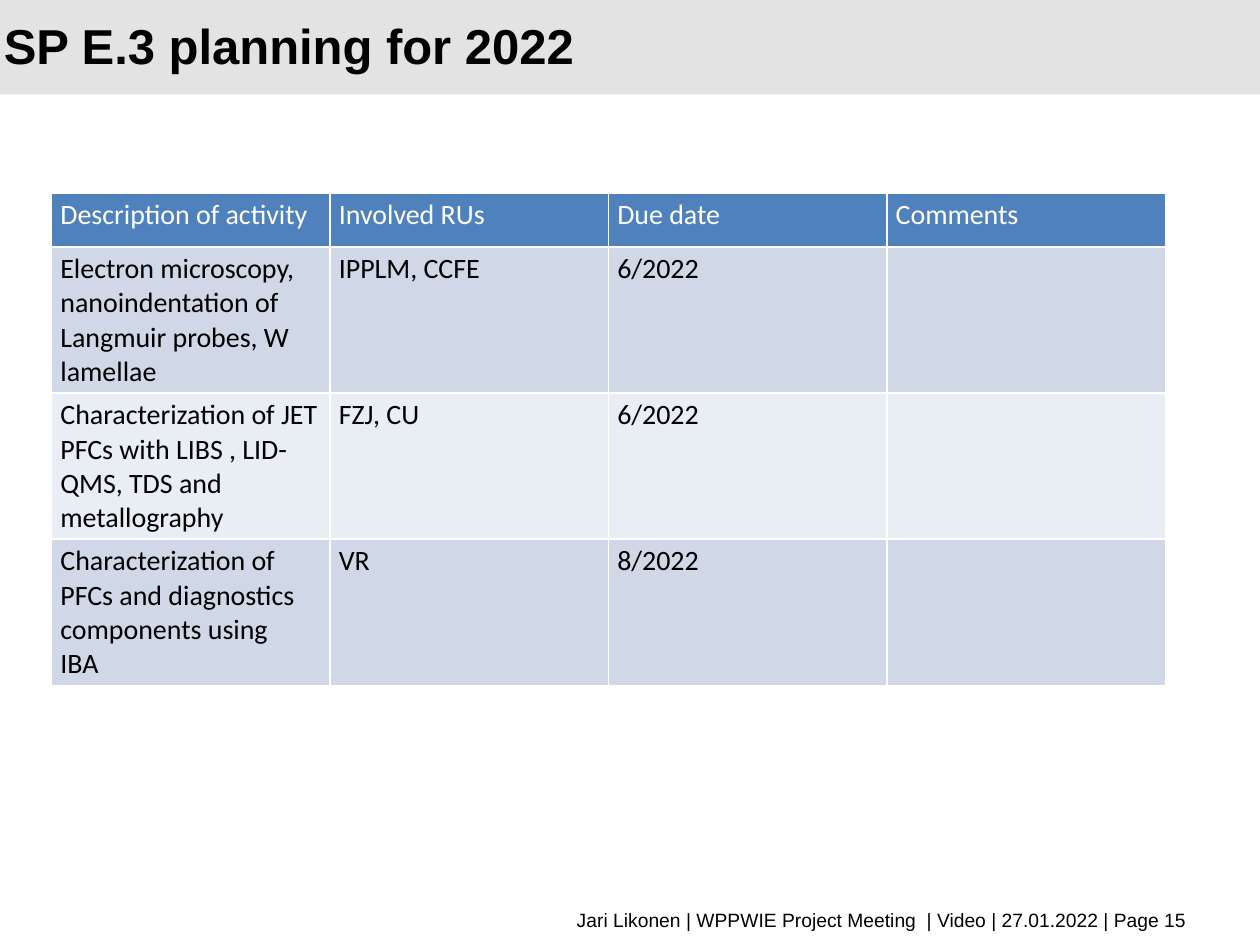
"""Build the SP E.3 planning slide with its activity table."""
from dataclasses import dataclass

from lxml import etree
from pptx import Presentation
from pptx.dml.color import RGBColor
from pptx.enum import shapes, text
from pptx.oxml import ns
from pptx.util import Inches, Pt


@dataclass
class Task:
    about: list[str]
    units: str
    due: str
    note: str = ""


@dataclass
class Style:
    size: float
    face: str
    color: str = "000000"
    bold: bool = False


HEAD = Task(["Description of activity"], "Involved RUs", "Due date", "Comments")
TASKS = [
    Task(["Electron microscopy, nanoindentation of Langmuir probes, W lamellae"],
         "IPPLM, CCFE", "6/2022"),
    Task(["Characterization of JET PFCs with LIBS , LID-QMS, TDS and metallography"],
         "FZJ, CU", "6/2022"),
    Task(["Characterization of PFCs and diagnostics components using", "IBA"],
         "VR", "8/2022"),
]
BANDS = ["D0D8E8", "E9EDF4"]
TITLE = Style(28, "Arial", bold=True)
FOOT = Style(11, "Arial")
TOP = Style(16, "Calibri", "FFFFFF")
BODY = Style(16, "Calibri")


def paint(fill, color: str) -> None:
    fill.solid()
    fill.fore_color.rgb = RGBColor.from_string(color)


def write(frame, lines: list[str], style: Style, align=text.PP_ALIGN.LEFT) -> None:
    for i, line in enumerate(lines):
        para = frame.add_paragraph() if i else frame.paragraphs[0]
        para.alignment = align
        para.font.size = Pt(style.size)
        if not line:
            continue
        run = para.add_run()
        run.text = line
        font = run.font
        font.size, font.name, font.bold = Pt(style.size), style.face, style.bold
        paint(font.fill, style.color)


def place(shape, left: float, top: float, width: float, height: float) -> None:
    shape.left, shape.top = Inches(left), Inches(top)
    shape.width, shape.height = Inches(width), Inches(height)


def edge(cell, color: str, width: float) -> None:
    props = cell._tc.get_or_add_tcPr()
    for side in "LRTB":
        line = etree.SubElement(props, ns.qn(f"a:ln{side}"), w=str(Pt(width)))
        fill = etree.SubElement(line, ns.qn("a:solidFill"))
        etree.SubElement(fill, ns.qn("a:srgbClr"), val=color)


def fill_row(row, task: Task, color: str, style: Style) -> None:
    values = [task.about, [task.units], [task.due], [task.note]]
    for cell, lines in zip(row.cells, values):
        cell.margin_left = cell.margin_right = Inches(0.07)
        cell.margin_top = cell.margin_bottom = Inches(0.04)
        edge(cell, "FFFFFF", 1)
        paint(cell.fill, color)
        write(cell.text_frame, lines, style)


def add_grid(slide) -> None:
    grid = slide.shapes.add_table(
        len(TASKS) + 1, 4, Inches(0.41), Inches(1.53), Inches(8.84), Inches(3.91)).table
    for row in grid.rows:
        row.height = Inches(1.16)
    grid.rows[0].height = Inches(0.43)
    fill_row(grid.rows[0], HEAD, "4F81BD", TOP)
    for i, task in enumerate(TASKS):
        fill_row(grid.rows[i + 1], task, BANDS[i % 2], BODY)


def add_title(slide) -> None:
    band = slide.shapes.add_shape(
        shapes.MSO_SHAPE.RECTANGLE, 0, 0, Inches(10), Inches(0.75))
    band.shadow.inherit = False
    paint(band.fill, "E3E3E3")
    band.line.fill.background()
    title = slide.shapes.title
    title._element.addprevious(band._element)
    place(title, -0.07, 0.12, 8.25, 0.5)
    frame = title.text_frame
    frame.auto_size = text.MSO_AUTO_SIZE.NONE
    frame.vertical_anchor = text.MSO_ANCHOR.MIDDLE
    write(frame, ["SP E.3 planning for 2022"], TITLE)
    frame.paragraphs[0].line_spacing = Pt(32)


def add_foot(slide) -> None:
    box = slide.shapes.add_textbox(0, 0, 0, 0)
    place(box, 0.51, 7.16, 9.01, 0.29)
    box.text_frame.word_wrap = True
    write(box.text_frame,
          ["Jari Likonen | WPPWIE Project Meeting  | Video | 27.01.2022 | Page 15"],
          FOOT, text.PP_ALIGN.RIGHT)


def main() -> None:
    deck = Presentation()
    deck.slide_width, deck.slide_height = Inches(10), Inches(7.5)
    slide = deck.slides.add_slide(deck.slide_layouts[5])
    add_title(slide)
    add_foot(slide)
    add_grid(slide)
    deck.save("out.pptx")


if __name__ == "__main__":
    main()
